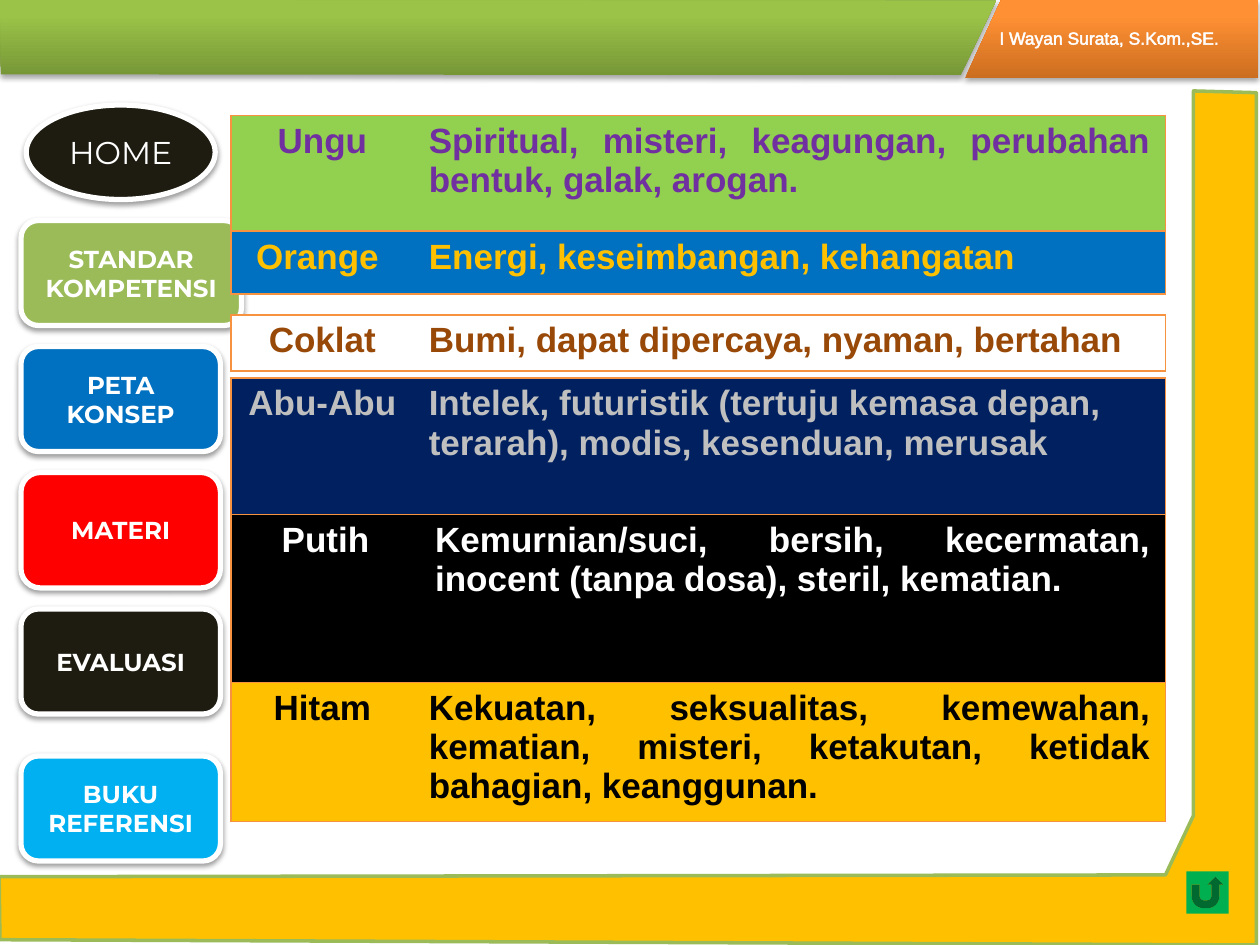
from lxml import etree
from pptx import Presentation
from pptx.dml.color import RGBColor
from pptx.enum.shapes import MSO_SHAPE
from pptx.enum.text import MSO_ANCHOR, PP_ALIGN
from pptx.oxml.ns import qn
from pptx.util import Pt

OVAL, ROUND = MSO_SHAPE.OVAL, MSO_SHAPE.ROUNDED_RECTANGLE
BACK = MSO_SHAPE.ACTION_BUTTON_RETURN
LEFT, MID, JUST = PP_ALIGN.LEFT, PP_ALIGN.CENTER, PP_ALIGN.JUSTIFY
CORE = MSO_ANCHOR.MIDDLE

THEME = {
    "white": "FFFFFF", "ink": "1E1C11", "green": "9BBB59", "blue": "0070C0",
    "red": "FF0000", "sky": "00B0F0", "gold": "FFC000", "back": "00B050",
    "edge": "F69240", "shade": "000000",
    "lime": ("779737", "9BC348"), "amber": ("CC6E20", "FF9034"),
    "home": {"name": "Montserrat", "size": Pt(18), "bold": False},
    "menu": {"name": "Montserrat", "size": Pt(14), "bold": True},
    "body": {"name": "Arial", "size": Pt(20), "bold": True},
    "name": {"name": "Arial", "size": Pt(10), "bold": False},
}

MENU = [
    ("HOME", OVAL, (15, 60, 108, 54), "ink", "home"),
    ("STANDAR KOMPETENSI", ROUND, (12, 126, 126, 60), "green", "menu"),
    ("PETA KONSEP", ROUND, (12, 198, 114, 60), "blue", "menu"),
    ("MATERI", ROUND, (12, 270, 114, 66), "red", "menu"),
    ("EVALUASI", ROUND, (12, 348, 114, 60), "ink", "menu"),
    ("BUKU REFERENSI", ROUND, (12, 432, 114, 60), "sky", "menu"),
]

FRAME = [(-0.5, 501), (666, 500), (682, 466), (682, 52), (718, 53),
         (718, 540), (0, 537)]
BARS = [
    ([(0, 0), (569, 0.5), (549, 43), (0.5, 42.5)], "lime"),
    ([(572, 0), (719, 0), (719, 44.5), (551.5, 44.5)], "amber"),
]
AUTHOR = "I Wayan Surata, S.Kom.,SE."

HUES = [
    ("Ungu", "Spiritual, misteri, keagungan, perubahan bentuk, galak, arogan.",
     66, 66, 104.4, JUST, "7030A0", "92D050"),
    ("Orange ", "Energi, keseimbangan, kehangatan",
     132, 36, 104.4, LEFT, "FFC000", "0070C0"),
    ("Coklat", "Bumi, dapat dipercaya, nyaman, bertahan",
     180, 32, 104.4, JUST, "984807", "FFFFFF"),
    ("Abu-Abu", "Intelek, futuristik (tertuju kemasa depan, terarah), modis, "
     "kesenduan, merusak", 216, 78, 104.4, LEFT, "BFBFBF", "002060"),
    ("Putih", "Kemurnian/suci, bersih, kecermatan, inocent (tanpa dosa), "
     "steril, kematian.", 294, 96, 108, JUST, "FFFFFF", "000000"),
    ("Hitam", "Kekuatan, seksualitas, kemewahan, kematian, misteri, ketakutan, "
     "ketidak bahagian, keanggunan.", 390, 79, 104.4, JUST, "000000", "FFC000"),
]
TAB_X, TAB_W = 132, 534
PLAIN = "{2D5ABB26-0587-4C30-8999-92F81FD0307C}"


def rgb(code):
    return RGBColor.from_string(THEME.get(code, code))


def box(*nums):
    return [Pt(n) for n in nums]


def node(top, tag, **attrs):
    return etree.SubElement(top, qn(tag), {k: str(v) for k, v in attrs.items()})


def solid(top, code):
    return node(node(top, "a:solidFill"), "a:srgbClr", val=rgb(code))


def paint(shape, fill, line=None, wide=0):
    shape.shadow.inherit = False
    shape.fill.solid()
    shape.fill.fore_color.rgb = rgb(fill)
    if line:
        shape.line.color.rgb = rgb(line)
        shape.line.width = Pt(wide)
    else:
        shape.line.fill.background()


def shade(shape, dense, drop):
    fx = shape._element.spPr.find(qn("a:effectLst"))
    cast = node(fx, "a:outerShdw", blurRad=Pt(3.1), dist=Pt(drop),
                dir=90 * 60000, rotWithShape=0)
    hue = node(cast, "a:srgbClr", val=THEME["shade"])
    node(hue, "a:alpha", val=dense * 1000)


def write(frame, text, style, hue, align):
    frame.word_wrap = True
    para = frame.paragraphs[0]
    para.alignment = align
    run = para.add_run()
    run.text = text
    for key, val in THEME[style].items():
        setattr(run.font, key, val)
    run.font.color.rgb = rgb(hue)
    return run


def outline(slide, pts):
    pts = [box(*p) for p in pts]
    pen = slide.shapes.build_freeform(*pts[0])
    pen.add_line_segments(pts[1:], close=True)
    return pen.convert_to_shape()


def add_menu(slide):
    for text, kind, area, fill, style in MENU:
        shape = slide.shapes.add_shape(kind, *box(*area))
        paint(shape, fill, "white", 3)
        shade(shape, 38, 1.6)
        shape.text_frame.vertical_anchor = CORE
        write(shape.text_frame, text, style, "white", MID)


def add_frame(slide):
    paint(outline(slide, FRAME), "gold", "green", 2)
    for pts, tint in BARS:
        bar = outline(slide, pts)
        paint(bar, "white")
        bar.fill.gradient()
        bar.fill.gradient_angle = 90
        for stop, code, pos in zip(bar.fill.gradient_stops, THEME[tint], (0, 0.8)):
            stop.color.rgb = rgb(code)
            stop.position = pos
        shade(bar, 35, 1.8)
    label = slide.shapes.add_textbox(*box(564, 12, 156, 19.5))
    run = write(label.text_frame, AUTHOR, "name", "white", LEFT)
    rim = etree.Element(qn("a:ln"), w=str(Pt(1.45)))
    solid(rim, "white")
    run.font._element.insert(0, rim)


def trim(cell, sides):
    props = cell._tc.get_or_add_tcPr()
    for spot, side in enumerate(sides):
        rim = etree.Element(qn("a:ln" + side), w=str(Pt(0.75)))
        solid(rim, "edge")
        props.insert(spot, rim)


def add_hue(slide, name, text, top, high, wide, align, hue, fill):
    holder = slide.shapes.add_table(1, 2, *box(TAB_X, top, TAB_W, high))
    table = holder.table
    table.first_row = table.horz_banding = False
    for mark in holder._element.iter(qn("a:tableStyleId")):
        mark.text = PLAIN
    table.rows[0].height = Pt(high)
    cols = [(name, wide, MID, "LTB"), (text, TAB_W - wide, align, "RTB")]
    for spot, (words, width, side, rims) in enumerate(cols):
        table.columns[spot].width = Pt(width)
        cell = table.cell(0, spot)
        cell.margin_left = cell.margin_right = Pt(8.64)
        cell.fill.solid()
        cell.fill.fore_color.rgb = rgb(fill)
        trim(cell, rims)
        write(cell.text_frame, words, "body", hue, side)


def main():
    deck = Presentation()
    deck.slide_width, deck.slide_height = box(720, 540)
    slide = deck.slides.add_slide(deck.slide_layouts[6])
    add_menu(slide)
    add_frame(slide)
    for row in HUES:
        add_hue(slide, *row)
    paint(slide.shapes.add_shape(BACK, *box(678, 498, 24, 24)), "back")
    deck.save("out.pptx")


if __name__ == "__main__":
    main()
